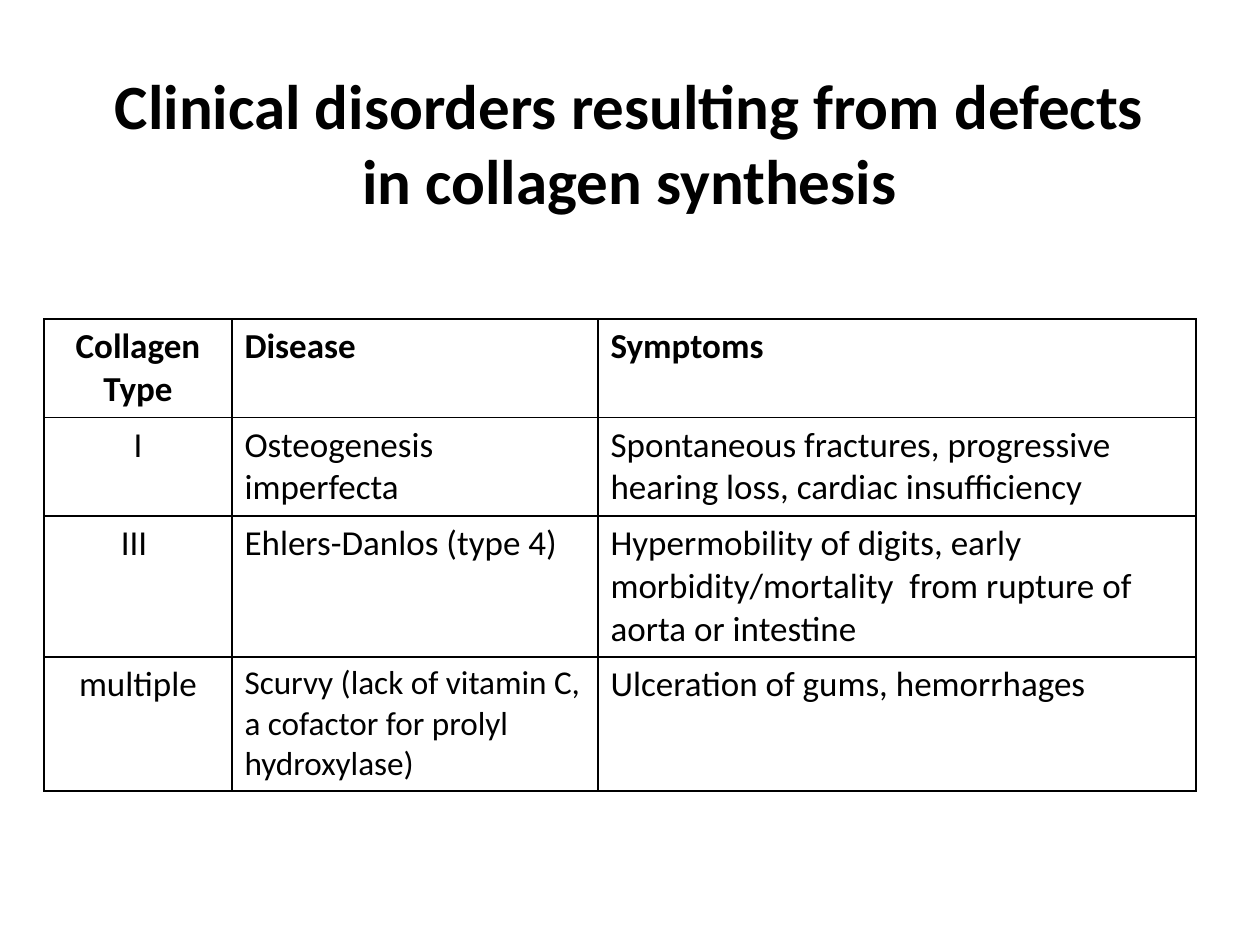
from lxml import etree
from pptx import Presentation
from pptx.dml.color import RGBColor
from pptx.enum.text import MSO_ANCHOR, PP_ALIGN
from pptx.oxml.ns import qn
from pptx.util import Emu, Pt

CENTER, LEFT = PP_ALIGN.CENTER, PP_ALIGN.LEFT
TOP, MIDDLE = MSO_ANCHOR.TOP, MSO_ANCHOR.MIDDLE
EMU_PER_PX = 914400 / 126
FONT = "Calibri"
BLACK, WHITE = "000000", "FFFFFF"
TITLE_ONLY = 5

TITLE = "Clinical disorders resulting from defects in collagen synthesis"
TITLE_BOX = (94, 63, 1071, 158)
TABLE_BOX = (44, 319, 1152, 471)
COLUMN_WIDTHS = (188, 366, 598)
ROW_HEIGHTS = (98, 98, 141, 134)
BODY_SIZE = 20
SMALL_SIZE = 19
SMALL_CELL = (3, 1)
DISORDERS = (
    ("Collagen Type", "Disease", "Symptoms"),
    ("I", "Osteogenesis imperfecta",
     "Spontaneous fractures, progressive hearing loss, cardiac insufficiency"),
    ("III ", "Ehlers-Danlos (type 4)",
     "Hypermobility of digits, early morbidity/mortality  from rupture of aorta or intestine"),
    ("multiple", "Scurvy (lack of vitamin C, a cofactor for prolyl hydroxylase)",
     "Ulceration of gums, hemorrhages"),
)


def px(length):
    """Turn pixels into EMU."""
    return Emu(round(length * EMU_PER_PX))


def color(hex_string):
    """Turn a hex string into a colour."""
    return RGBColor.from_string(hex_string)


def write_text(text_frame, text, size, bold, alignment):
    """Write one formatted run into the first paragraph."""
    paragraph = text_frame.paragraphs[0]
    paragraph.alignment = alignment
    paragraph.space_before = Pt(0)
    run = paragraph.add_run()
    run.text = text
    run.font.name = FONT
    run.font.size = Pt(size)
    run.font.bold = bold
    run.font.color.rgb = color(BLACK)


def add_borders(cell, line_color, width):
    """Draw a solid line on all four sides of a cell."""
    properties = cell._tc.get_or_add_tcPr()
    for position, side in enumerate(("a:lnL", "a:lnR", "a:lnT", "a:lnB")):
        line = etree.Element(qn(side), w=str(Pt(width)))
        fill = etree.SubElement(line, qn("a:solidFill"))
        etree.SubElement(fill, qn("a:srgbClr"), val=line_color)
        properties.insert(position, line)


def add_title(slide, box):
    """Place the title placeholder in its box."""
    title = slide.shapes.title
    title.left, title.top, title.width, title.height = map(px, box)
    title.text_frame.word_wrap = True
    title.text_frame.vertical_anchor = MIDDLE
    write_text(title.text_frame, TITLE, 36, True, CENTER)


def add_disorder_table(slide, box):
    """Place the table of collagen disorders in its box."""
    table = slide.shapes.add_table(
        len(ROW_HEIGHTS), len(COLUMN_WIDTHS), *map(px, box)).table
    table.horz_banding = False
    for column, width in zip(table.columns, COLUMN_WIDTHS):
        column.width = px(width)
    for row, height in zip(table.rows, ROW_HEIGHTS):
        row.height = px(height)
    for row_index, texts in enumerate(DISORDERS):
        for column_index, text in enumerate(texts):
            cell = table.cell(row_index, column_index)
            cell.vertical_anchor = TOP
            cell.fill.solid()
            cell.fill.fore_color.rgb = color(WHITE)
            add_borders(cell, BLACK, 1)
            size = SMALL_SIZE if (row_index, column_index) == SMALL_CELL else BODY_SIZE
            alignment = CENTER if column_index == 0 else LEFT
            write_text(cell.text_frame, text, size, row_index == 0, alignment)


def main():
    """Build the slide and save it."""
    presentation = Presentation()
    presentation.slide_width, presentation.slide_height = px(1260), px(945)
    slide = presentation.slides.add_slide(presentation.slide_layouts[TITLE_ONLY])
    add_title(slide, TITLE_BOX)
    add_disorder_table(slide, TABLE_BOX)
    presentation.save("out.pptx")


if __name__ == "__main__":
    main()
